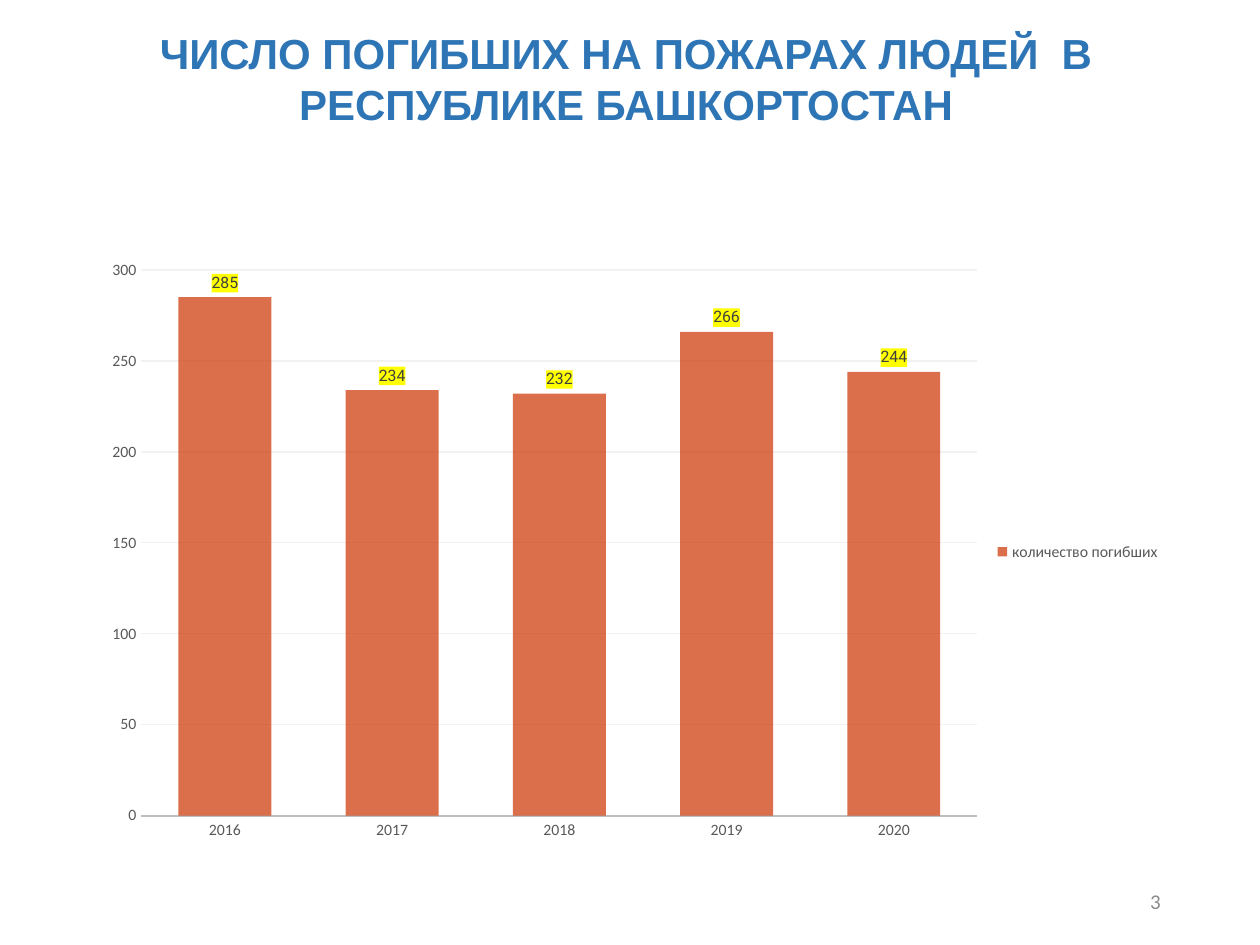
from pptx import Presentation
from pptx.chart.data import CategoryChartData
from pptx.dml.color import RGBColor
from pptx.enum.chart import XL_CHART_TYPE as ChartType, XL_LABEL_POSITION as LabelPos
from pptx.enum.chart import XL_LEGEND_POSITION as LegendPos, XL_TICK_MARK as Tick
from pptx.enum.text import MSO_ANCHOR as Anchor, PP_ALIGN as Align
from pptx.oxml import parse_xml
from pptx.oxml.ns import nsdecls, qn
from pptx.util import Pt

COLORS = {
    "title": "2E75B6", "bar": "CC3300", "label": "404040", "highlight": "FFFF00",
    "axis_text": "595959", "axis_line": "BFBFBF", "grid": "F2F2F2", "number": "8C8C8C",
}
DEATHS = {"2016": 285, "2017": 234, "2018": 232, "2019": 266, "2020": 244}


def rgb(name):
    return RGBColor.from_string(COLORS[name])


def style_font(font, face, size, color, bold=False):
    font.name, font.size, font.bold = face, Pt(size), bold
    font.color.rgb = rgb(color)


def place(shape, left, top, width, height):
    shape.left, shape.top = Pt(left), Pt(top)
    shape.width, shape.height = Pt(width), Pt(height)


def write(shape, text, align, anchor, **font):
    frame = shape.text_frame
    frame.word_wrap = True
    frame.vertical_anchor = anchor
    line = frame.paragraphs[0]
    line.alignment = align
    line.line_spacing = 1.0
    run = line.add_run()
    run.text = text
    style_font(run.font, **font)


def set_plot_area(chart, x, y, w, h):
    """Fix the inner plot area, in fractions of the chart."""
    plot_area = chart.element.find(".//" + qn("c:plotArea"))
    for automatic in plot_area.findall(qn("c:layout")):
        plot_area.remove(automatic)
    plot_area.insert(0, parse_xml(
        f'<c:layout {nsdecls("c")}><c:manualLayout><c:layoutTarget val="inner"/>'
        '<c:xMode val="edge"/><c:yMode val="edge"/>'
        f'<c:x val="{x}"/><c:y val="{y}"/><c:w val="{w}"/><c:h val="{h}"/>'
        '</c:manualLayout></c:layout>'))


def style_axes(chart):
    years, counts = chart.category_axis, chart.value_axis
    for axis in (years, counts):
        axis.major_tick_mark = axis.minor_tick_mark = Tick.NONE
        style_font(axis.tick_labels.font, "Calibri", 9, "axis_text")
    years.format.line.color.rgb = rgb("axis_line")
    years.format.line.width = Pt(1.25)
    counts.minimum_scale, counts.maximum_scale, counts.major_unit = 0, 300, 50
    counts.format.line.fill.background()
    grid = counts.major_gridlines.format.line
    grid.color.rgb = rgb("grid")
    grid.width = Pt(0.75)


def style_bars(plot):
    plot.gap_width, plot.overlap = 80, 25
    plot.vary_by_categories = False
    bars = plot.series[0]
    bars.format.fill.solid()
    bars.format.fill.fore_color.rgb = rgb("bar")
    color = bars.format.fill._xPr.find(".//" + qn("a:srgbClr"))
    color.append(parse_xml(f'<a:alpha {nsdecls("a")} val="70000"/>'))
    labels = bars.data_labels
    labels.show_value = True
    labels.position = LabelPos.OUTSIDE_END
    style_font(labels.font, "Roboto", 9, "label")
    labels._element.find(qn("c:txPr")).addprevious(parse_xml(
        f'<c:spPr {nsdecls("c", "a")}><a:solidFill>'
        f'<a:srgbClr val="{COLORS["highlight"]}"/></a:solidFill></c:spPr>'))


def add_deaths_chart(slide):
    data = CategoryChartData()
    data.categories = list(DEATHS)
    data.add_series("количество погибших", list(DEATHS.values()))
    chart = slide.shapes.add_chart(
        ChartType.COLUMN_CLUSTERED, Pt(49.7), Pt(144), Pt(620.6), Pt(342.7), data).chart
    chart.has_title = False
    chart.font.name, chart.font.size = "Calibri", Pt(10)
    chart.has_legend = True
    chart.legend.position = LegendPos.RIGHT
    chart.legend.include_in_layout = False
    style_font(chart.legend.font, "Calibri", 9, "axis_text")
    set_plot_area(chart, 0.05, 0.03, 0.77, 0.91)
    style_axes(chart)
    style_bars(chart.plots[0])


def main():
    deck = Presentation()
    deck.slide_width, deck.slide_height = Pt(720), Pt(540)
    slide = deck.slides.add_slide(deck.slide_layouts[5])

    heading = slide.shapes.title
    place(heading, 48.2, 12.2, 619.2, 65.5)
    write(heading, "ЧИСЛО ПОГИБШИХ НА ПОЖАРАХ ЛЮДЕЙ  В РЕСПУБЛИКЕ БАШКОРТОСТАН",
          Align.CENTER, Anchor.TOP, face="Arial", size=24, color="title", bold=True)

    add_deaths_chart(slide)

    page_number = slide.shapes.add_textbox(Pt(508.3), Pt(500.4), Pt(162), Pt(28.8))
    write(page_number, "3", Align.RIGHT, Anchor.MIDDLE,
          face="Calibri", size=12, color="number")
    deck.save("out.pptx")


if __name__ == "__main__":
    main()
